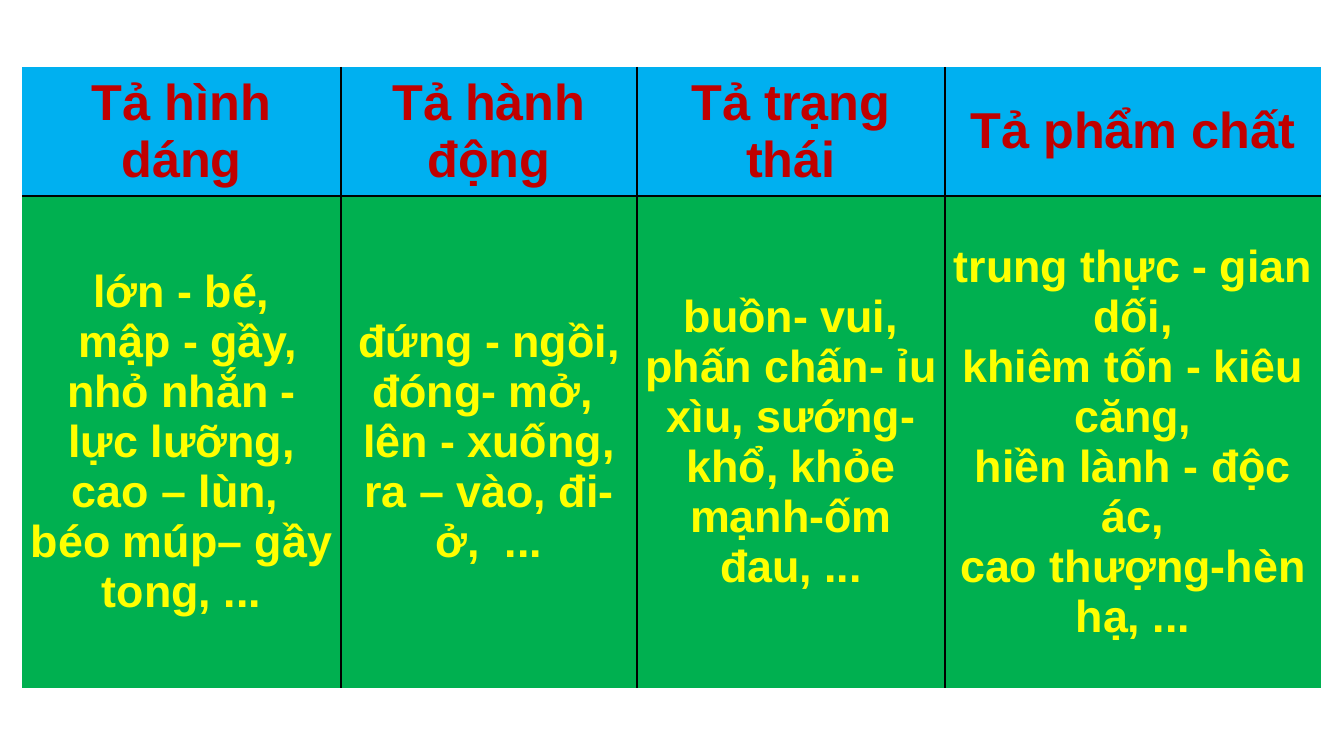
from lxml import etree
from pptx import Presentation
from pptx.dml.color import RGBColor
from pptx.enum.text import MSO_ANCHOR, PP_ALIGN
from pptx.oxml.ns import qn
from pptx.util import Pt

# Content: heading and word pairs of each column
WORD_GROUPS = [
    ("Tả hình dáng", ["lớn - bé,", " mập - gầy,", "nhỏ nhắn - lực lưỡng,",
                      "cao – lùn, ", "béo múp– gầy tong, ..."]),
    ("Tả hành động", ["đứng - ngồi,", "đóng- mở, ", "lên - xuống,",
                      "ra – vào, đi-ở,  ..."]),
    ("Tả trạng thái", ["buồn- vui, phấn chấn- ỉu xìu, sướng-khổ, "
                       "khỏe mạnh-ốm đau, ..."]),
    ("Tả phẩm chất", ["trung thực - gian dối,", "khiêm tốn - kiêu căng,",
                      "hiền lành - độc ác,", "cao thượng-hèn hạ, ..."]),
]

# Layout in px
EMU_PER_PX = 914400 / 134.4
SLIDE_W, SLIDE_H = 1344, 756
LEFT, TOP = 22, 67
COLUMN_WIDTHS = [319, 296, 308, 376]
ROW_HEIGHTS = [129, 492]
INSET = 4

BLUE = RGBColor(0x00, 0xB0, 0xF0)
GREEN = RGBColor(0x00, 0xB0, 0x50)
RED = RGBColor(0xC0, 0x00, 0x00)
YELLOW = RGBColor(0xFF, 0xFF, 0x00)
BLACK = RGBColor(0x00, 0x00, 0x00)
ROW_STYLES = [(BLUE, RED, 27), (GREEN, YELLOW, 24)]


def px(length):
    return round(length * EMU_PER_PX)


def set_borders(cell, inner_sides):
    """Rule the inner sides in black and leave the outer sides open."""
    properties = cell._tc.get_or_add_tcPr()
    for position, side in enumerate("LRTB"):
        line = etree.Element(qn(f"a:ln{side}"), w=str(Pt(1)))
        if side in inner_sides:
            fill = etree.SubElement(line, qn("a:solidFill"))
            etree.SubElement(fill, qn("a:srgbClr"), val=str(BLACK))
        else:
            etree.SubElement(line, qn("a:noFill"))
        properties.insert(position, line)


def fill_cell(cell, lines, fill_color, font_color, size):
    cell.fill.solid()
    cell.fill.fore_color.rgb = fill_color
    cell.vertical_anchor = MSO_ANCHOR.MIDDLE
    for side in ("left", "right", "top", "bottom"):
        setattr(cell, f"margin_{side}", px(INSET))
    cell.text = "\n".join(lines)
    for paragraph in cell.text_frame.paragraphs:
        paragraph.alignment = PP_ALIGN.CENTER
        font = paragraph.runs[0].font
        for name, value in {"name": "Arial", "size": Pt(size), "bold": True}.items():
            setattr(font, name, value)
        font.color.rgb = font_color


def main():
    deck = Presentation()
    deck.slide_width, deck.slide_height = px(SLIDE_W), px(SLIDE_H)
    slide = deck.slides.add_slide(deck.slide_layouts[6])

    # Table grid
    word_table = slide.shapes.add_table(
        len(ROW_HEIGHTS), len(WORD_GROUPS), px(LEFT), px(TOP),
        px(sum(COLUMN_WIDTHS)), px(sum(ROW_HEIGHTS))).table
    word_table.first_row = word_table.horz_banding = False
    for column, width in zip(word_table.columns, COLUMN_WIDTHS):
        column.width = px(width)
    for row, height in zip(word_table.rows, ROW_HEIGHTS):
        row.height = px(height)

    # Headings above their word pairs
    last_column = len(WORD_GROUPS) - 1
    for col, (heading, pairs) in enumerate(WORD_GROUPS):
        sides = ("L" if col > 0 else "") + ("R" if col < last_column else "")
        for row, (lines, edge) in enumerate([([heading], "B"), (pairs, "T")]):
            cell = word_table.cell(row, col)
            fill_cell(cell, lines, *ROW_STYLES[row])
            set_borders(cell, sides + edge)

    deck.save("out.pptx")


if __name__ == "__main__":
    main()
